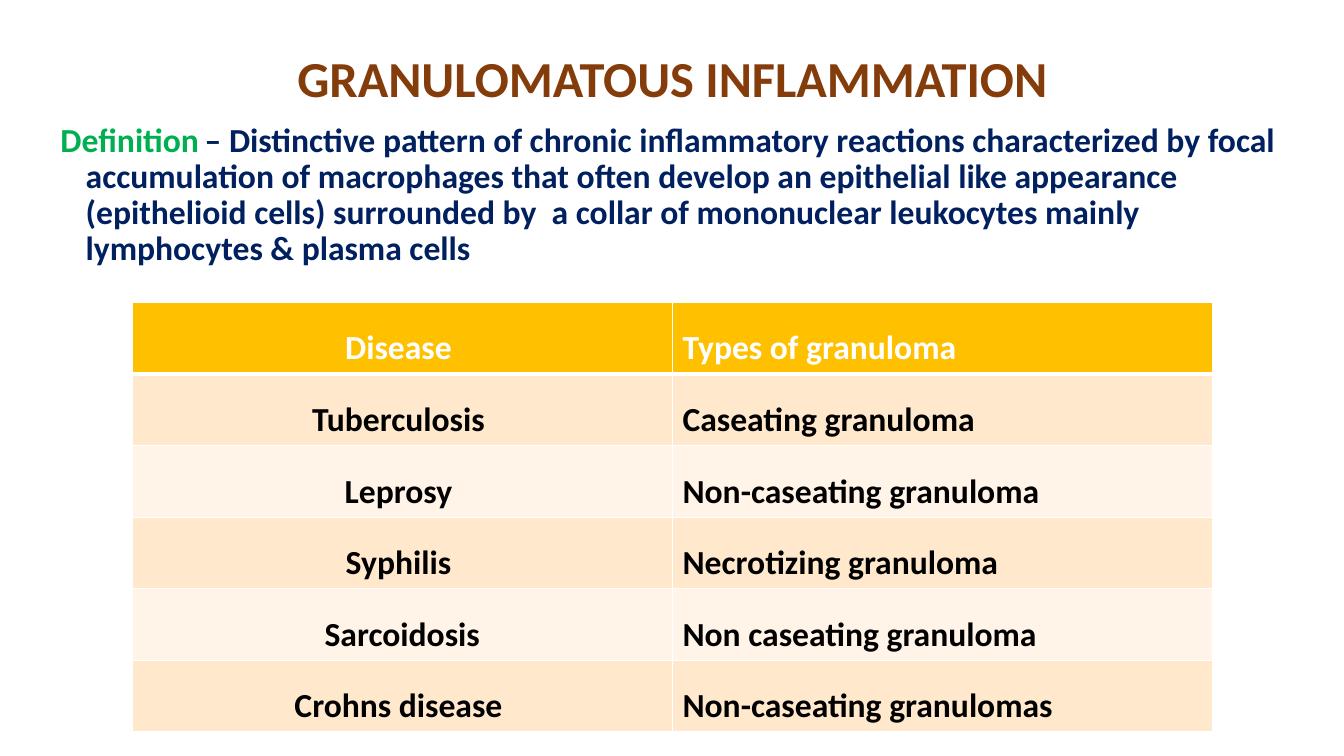
from lxml import etree
from pptx import Presentation
from pptx.dml.color import RGBColor
from pptx.enum.text import MSO_ANCHOR, MSO_AUTO_SIZE, PP_ALIGN
from pptx.oxml.ns import qn
from pptx.util import Inches, Pt

CENTER, LEFT = PP_ALIGN.CENTER, PP_ALIGN.LEFT
TOP, MIDDLE = MSO_ANCHOR.TOP, MSO_ANCHOR.MIDDLE
NO_AUTOFIT = MSO_AUTO_SIZE.NONE

FONT = "Calibri"
WHITE, BLACK = "FFFFFF", "000000"
BROWN, GREEN, NAVY = "843C0B", "00B050", "002060"
HEADER_FILL, ODD_FILL, EVEN_FILL = "FFC000", "FFE8CC", "FFF4E7"

DEFINITION = (
    "– Distinctive pattern of chronic inflammatory reactions characterized by "
    "focal accumulation of macrophages that often develop an epithelial like "
    "appearance (epithelioid cells) surrounded by  a collar of mononuclear "
    "leukocytes mainly lymphocytes & plasma cells"
)
GRANULOMAS = [
    ("Disease ", "Types of granuloma"),
    ("Tuberculosis ", "Caseating granuloma"),
    ("Leprosy ", "Non-caseating granuloma"),
    ("Syphilis ", "Necrotizing granuloma"),
    ("Sarcoidosis", "Non caseating granuloma"),
    ("Crohns disease ", "Non-caseating granulomas"),
]


def rgb(color):
    """Return the colour for a hex string."""
    return RGBColor.from_string(color)


def format_run(run, size, color, bold=True):
    """Set the font of a run."""
    run.font.name = FONT
    run.font.size = Pt(size)
    run.font.bold = bold
    run.font.color.rgb = rgb(color)


def place(shape, left, top, width, height):
    """Move a placeholder to a box given in inches."""
    shape.left, shape.top = Inches(left), Inches(top)
    shape.width, shape.height = Inches(width), Inches(height)
    shape.text_frame.word_wrap = True
    shape.text_frame.auto_size = NO_AUTOFIT


def add_title(slide, left, top, width, height):
    """Fill the title placeholder."""
    title = slide.shapes.title
    place(title, left, top, width, height)
    title.text_frame.text = "GRANULOMATOUS INFLAMMATION"
    title.text_frame.vertical_anchor = MIDDLE
    paragraph = title.text_frame.paragraphs[0]
    paragraph.alignment = CENTER
    paragraph.line_spacing = 0.9
    format_run(paragraph.runs[0], 36, BROWN)


def add_definition(slide, left, top, width, height):
    """Fill the body placeholder with the definition as a hanging paragraph."""
    body = slide.placeholders[1]
    place(body, left, top, width, height)
    body.text_frame.vertical_anchor = TOP
    paragraph = body.text_frame.paragraphs[0]
    paragraph.alignment = LEFT
    paragraph.line_spacing = 0.9
    paragraph.space_before, paragraph.space_after = Pt(10), Pt(18)
    properties = paragraph._p.get_or_add_pPr()
    properties.set("marL", str(Inches(0.25)))
    properties.set("indent", str(Inches(-0.25)))
    etree.SubElement(properties, qn("a:buNone"))
    for text, size, color, bold in (
        ("Definition", 24, GREEN, True),
        (" ", 18, GREEN, False),
        (DEFINITION, 24, NAVY, True),
    ):
        run = paragraph.add_run()
        run.text = text
        format_run(run, size, color, bold)


def set_borders(cell, widths):
    """Draw white cell borders with the given widths in points by side."""
    properties = cell._tc.get_or_add_tcPr()
    for side, width in widths.items():
        line = etree.SubElement(properties, qn(f"a:ln{side}"), w=str(Pt(width)))
        fill = etree.SubElement(line, qn("a:solidFill"))
        etree.SubElement(fill, qn("a:srgbClr"), val=WHITE)


def add_granuloma_table(slide, left, top, width, height):
    """Add the table of diseases and their granuloma types."""
    frame = slide.shapes.add_table(
        len(GRANULOMAS), 2, Inches(left), Inches(top), Inches(width), Inches(height)
    )
    for row, texts in enumerate(GRANULOMAS):
        if row == 0:
            fill, color = HEADER_FILL, WHITE
        else:
            fill, color = (ODD_FILL if row % 2 else EVEN_FILL), BLACK
        borders = {"L": 1, "R": 1, "T": 3 if row == 1 else 1, "B": 3 if row == 0 else 1}
        for column, text in enumerate(texts):
            cell = frame.table.cell(row, column)
            set_borders(cell, borders)
            cell.fill.solid()
            cell.fill.fore_color.rgb = rgb(fill)
            cell.text_frame.text = text
            paragraph = cell.text_frame.paragraphs[0]
            paragraph.alignment = LEFT if column else CENTER
            paragraph.line_spacing = 1.5
            paragraph.space_after = Pt(18)
            format_run(paragraph.runs[0], 24, color)


def main():
    """Build and save the presentation."""
    presentation = Presentation()
    presentation.slide_width = Inches(13.33)
    presentation.slide_height = Inches(7.5)
    slide = presentation.slides.add_slide(presentation.slide_layouts[1])
    add_title(slide, 1.67, 0.35, 10, 0.92)
    add_definition(slide, 0.5, 1.17, 12.49, 1.75)
    add_granuloma_table(slide, 1.31, 3, 10.72, 4.26)
    presentation.save("out.pptx")


if __name__ == "__main__":
    main()
